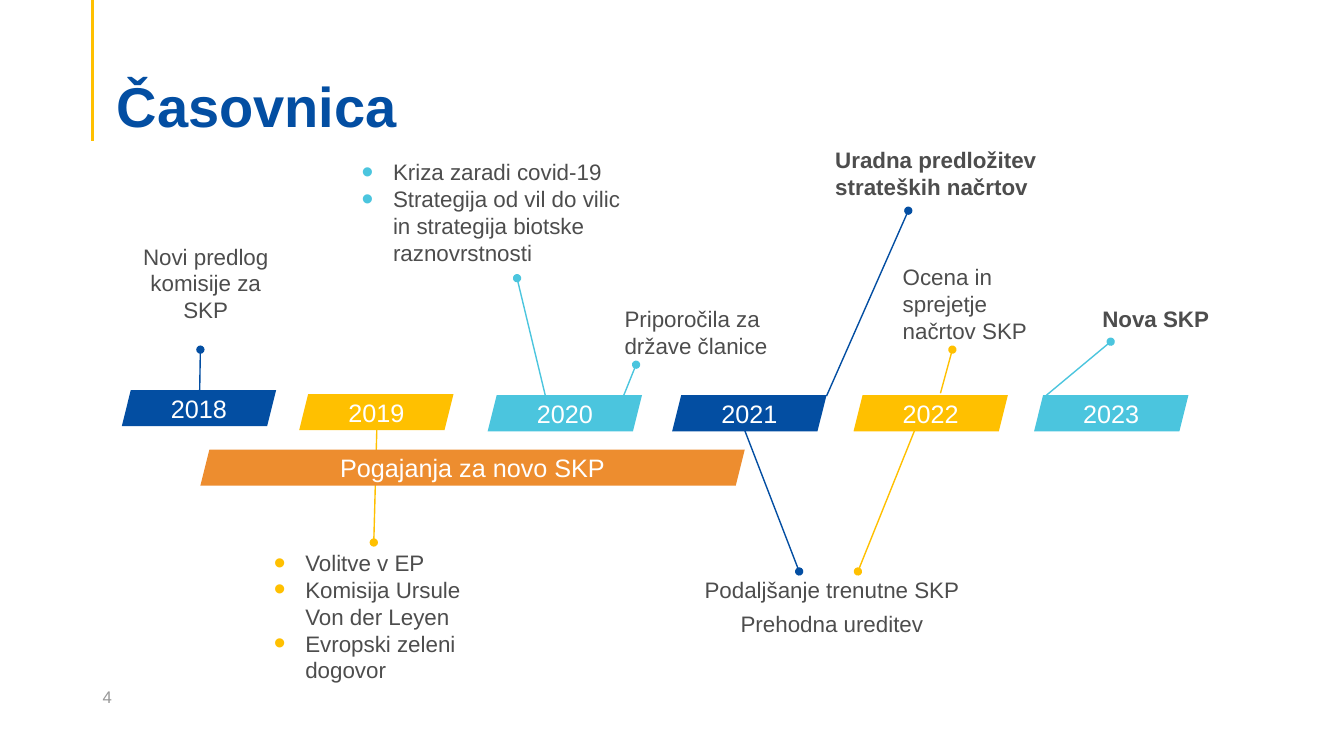
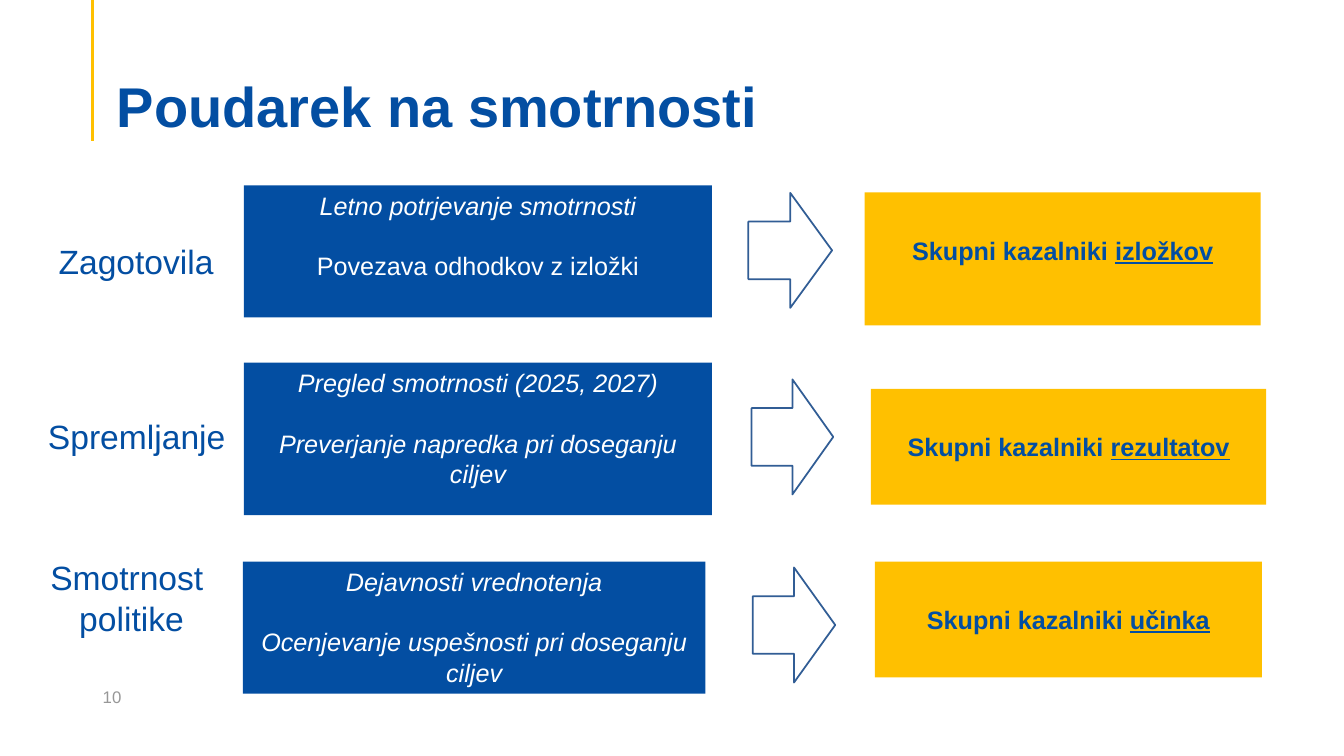
from dataclasses import dataclass, field

from lxml import etree
from pptx import Presentation
from pptx.dml.color import RGBColor
from pptx.enum.shapes import MSO_CONNECTOR, MSO_SHAPE
from pptx.enum.text import MSO_ANCHOR, MSO_AUTO_SIZE, PP_ALIGN
from pptx.oxml.ns import qn
from pptx.util import Cm, Pt

LEFT, CENTER = PP_ALIGN.LEFT, PP_ALIGN.CENTER
TOP, MIDDLE, BOTTOM = MSO_ANCHOR.TOP, MSO_ANCHOR.MIDDLE, MSO_ANCHOR.BOTTOM
RECT, SLANT, ARROW = MSO_SHAPE.RECTANGLE, MSO_SHAPE.PARALLELOGRAM, MSO_SHAPE.RIGHT_ARROW
STRAIGHT = MSO_CONNECTOR.STRAIGHT
NO_FIT = MSO_AUTO_SIZE.NONE

HUES = {
    "navy": "034EA2", "gold": "FFC000", "sky": "4BC5DE", "orange": "ED8D2F",
    "white": "FFFFFF", "text": "4D4D4D", "grey": "979797", "edge": "315D95",
}


@dataclass
class Style:
    size: float
    hue: str
    align: int = LEFT
    anchor: int = TOP
    gap: float = 0  # points before each later paragraph
    font: dict = field(default_factory=dict)
    frame: dict = field(default_factory=dict)


@dataclass
class Box:
    x: float
    y: float
    w: float
    h: float

    def place(self) -> tuple:
        return Cm(self.x), Cm(self.y), Cm(self.w), Cm(self.h)


@dataclass
class Note:
    box: Box
    lines: list
    style: Style


@dataclass
class Points:
    box: Box
    lines: list
    hue: str
    anchor: int


@dataclass
class Link:
    x: float
    y: float
    end_x: float
    end_y: float
    hue: str


@dataclass
class Row:
    label: str
    label_box: Box
    task_box: Box
    tasks: list
    arrow_box: Box
    goal_box: Box
    goal: str


TITLE = Style(40, "navy", anchor=BOTTOM, font={"bold": True}, frame={"margin_bottom": 0})
NUMBER = Style(12, "grey", anchor=MIDDLE)
CHIP = Style(18, "white", CENTER, MIDDLE)
PLAIN = Style(16, "text", anchor=BOTTOM)
STRONG = Style(16, "text", anchor=BOTTOM, font={"bold": True})
MID = Style(16, "text", CENTER, gap=5)
LABEL = Style(24, "navy", CENTER)
TASK = Style(18, "white", CENTER, gap=21.5, font={"italic": True})
GOAL = Style(18, "navy", CENTER, font={"bold": True},
             frame={"margin_left": Cm(0.3), "margin_right": Cm(0.3), "margin_top": Cm(1.07)})


# Shared helpers
def color(name: str) -> RGBColor:
    return RGBColor.from_string(HUES[name])


def apply(target, values: dict) -> None:
    for name, value in values.items():
        setattr(target, name, value)


def add_mark(props, hue: str) -> None:
    """Give a paragraph a large coloured round bullet."""
    props.set("marL", str(Cm(0.79)))
    props.set("indent", str(-Cm(0.79)))
    tint = etree.SubElement(props, qn("a:buClr"))
    etree.SubElement(tint, qn("a:srgbClr"), val=HUES[hue])
    etree.SubElement(props, qn("a:buSzPct"), val="150000")
    etree.SubElement(props, qn("a:buFont"), typeface="Arial")
    etree.SubElement(props, qn("a:buChar"), char="•")


def write(shape, lines: list, style: Style, mark: str = "") -> None:
    """Each line is a string or a list of (text, font changes) runs."""
    frame = shape.text_frame
    apply(frame, {"word_wrap": True, "auto_size": NO_FIT,
                  "vertical_anchor": style.anchor, **style.frame})
    for i, line in enumerate(lines):
        para = frame.add_paragraph() if i else frame.paragraphs[0]
        if mark:
            add_mark(para._p.get_or_add_pPr(), mark)
        apply(para, {"alignment": style.align, "space_before": Pt(style.gap if i else 0)})
        for text, change in [(line, {})] if isinstance(line, str) else line:
            run = para.add_run()
            run.text = text
            apply(run.font, {"name": "Arial", "size": Pt(style.size), **style.font, **change})
            run.font.color.rgb = color(style.hue)


def add_text(slide, box: Box, lines: list, style: Style) -> None:
    write(slide.shapes.add_textbox(*box.place()), lines, style)


def add_block(slide, kind: int, box: Box, fill: str, edge: str = ""):
    shape = slide.shapes.add_shape(kind, *box.place())
    shape.shadow.inherit = False
    shape.fill.solid()
    shape.fill.fore_color.rgb = color(fill)
    if edge:
        shape.line.color.rgb = color(edge)
        shape.line.width = Pt(1.25)
    else:
        shape.line.fill.background()
    return shape


def add_line(slide, link: Link, width: float = 1, dot: bool = True) -> None:
    line = slide.shapes.add_connector(
        STRAIGHT, Cm(link.x), Cm(link.y), Cm(link.end_x), Cm(link.end_y))
    line.line.color.rgb = color(link.hue)
    line.line.width = Pt(width)
    props = line._element.spPr
    if dot:
        etree.SubElement(props.find(qn("a:ln")), qn("a:tailEnd"), type="oval")
    etree.SubElement(props, qn("a:effectLst"))


def set_place(shape, box: Box) -> None:
    apply(shape, dict(zip(("left", "top", "width", "height"), box.place())))


def add_slide(deck, layout: int, title: str, number: str):
    slide = deck.slides.add_slide(deck.slide_layouts[layout])
    add_line(slide, Link(2.34, 0, 2.34, 3.56, "gold"), 2.25, False)
    head = slide.shapes.title
    set_place(head, Box(2.69, 1.35, 29.21, 2.18))
    write(head, [title], TITLE)
    head.text_frame.paragraphs[0].line_spacing = 0.9
    add_text(slide, Box(2.34, 17.04, 7.62, 1.02), [number], NUMBER)
    return slide


# Timeline
YEARS = [
    ("2018", 3.07, 9.83), ("2019", 7.54, 9.93), ("2020", 12.29, 9.96),
    ("2021", 16.94, 9.96), ("2022", 21.51, 9.96), ("2023", 26.06, 9.96),
]
CYCLE = ("navy", "gold", "sky")
LINKS = [
    Link(5.03, 9.96, 5.05, 8.81, "navy"),
    Link(9.5, 10.67, 9.42, 13.67, "gold"),
    Link(13.77, 10.08, 13.03, 7.01, "sky"),
    Link(15.72, 9.96, 16.03, 9.19, "sky"),
    Link(18.77, 10.85, 20.14, 14.4, "navy"),
    Link(20.83, 9.98, 22.89, 5.31, "navy"),
    Link(23.06, 10.82, 21.62, 14.4, "gold"),
    Link(23.7, 9.91, 24, 8.81, "gold"),
    Link(26.37, 9.96, 27.99, 8.61, "sky"),
]
NOTES = [
    Note(Box(3.23, 5.99, 3.91, 2.31), ["Novi predlog komisije za SKP"], MID),
    Note(Box(15.49, 7.54, 5.64, 1.63), ["Priporočila za države članice"], PLAIN),
    Note(Box(17.42, 14.4, 7.09, 2.49),
         ["Podaljšanje trenutne SKP", "Prehodna ureditev"], MID),
    Note(Box(20.8, 3.53, 6.3, 1.63), ["Uradna predložitev strateških načrtov"], STRONG),
    Note(Box(22.5, 6.48, 3.99, 2.31), ["Ocena in sprejetje načrtov SKP"], PLAIN),
    Note(Box(27.53, 7.54, 3.4, 0.94), ["Nova SKP"], STRONG),
]
LISTS = [
    Points(Box(8.86, 3.86, 7.06, 3),
           ["Kriza zaradi covid-19",
            "Strategija od vil do vilic in strategija biotske raznovrstnosti"], "sky", TOP),
    Points(Box(6.65, 13.67, 5.54, 3.68),
           ["Volitve v EP", "Komisija Ursule Von der Leyen", "Evropski zeleni dogovor"],
           "gold", BOTTOM),
]


def draw_years(deck) -> None:
    slide = add_slide(deck, 3, "Časovnica", "4")
    for i, (year, x, y) in enumerate(YEARS):
        chip = add_block(slide, SLANT, Box(x, y, 3.89, 0.91), CYCLE[i % len(CYCLE)])
        write(chip, [year], CHIP)
    for link in LINKS:
        add_line(slide, link)
    band = add_block(slide, SLANT, Box(5.05, 11.33, 13.72, 0.91), "orange")
    write(band, ["Pogajanja za novo SKP"], CHIP)
    for note in NOTES:
        add_text(slide, note.box, note.lines, note.style)
    for i, points in enumerate(LISTS, 1):
        body = slide.placeholders[i]
        set_place(body, points.box)
        write(body, points.lines, Style(16, "text", anchor=points.anchor), points.hue)


# Performance rows
ROWS = [
    Row("Zagotovila", Box(0.74, 5.94, 5.38, 1.27),
        Box(6.15, 4.67, 11.79, 3.33),
        ["Letno potrjevanje smotrnosti", [("Povezava odhodkov z izložki", {"italic": False})]],
        Box(18.86, 4.86, 2.11, 2.9), Box(21.79, 4.85, 9.98, 3.35), "izložkov"),
    Row("Spremljanje", Box(0.74, 10.36, 5.41, 1.27),
        Box(6.15, 9.14, 11.79, 3.84),
        ["Pregled smotrnosti (2025, 2027)", "Preverjanje napredka pri doseganju ciljev"],
        Box(18.94, 9.56, 2.06, 2.9), Box(21.95, 9.8, 9.96, 2.92), "rezultatov"),
    Row("Smotrnost \npolitike", Box(0.51, 13.92, 5.61, 2.31),
        Box(6.12, 14.15, 11.66, 3.33),
        ["Dejavnosti vrednotenja", "Ocenjevanje uspešnosti pri doseganju ciljev"],
        Box(18.97, 14.3, 2.08, 2.9), Box(22.05, 14.15, 9.75, 2.92), "učinka"),
]


def draw_rows(deck) -> None:
    slide = add_slide(deck, 5, "Poudarek na smotrnosti", "10")
    for row in ROWS:
        add_text(slide, row.label_box, row.label.split("\n"), LABEL)
        write(add_block(slide, RECT, row.task_box, "navy"), row.tasks, TASK)
        add_block(slide, ARROW, row.arrow_box, "white", "edge")
        goal = [("Skupni kazalniki ", {}), (row.goal, {"underline": True})]
        write(add_block(slide, RECT, row.goal_box, "gold"), [goal], GOAL)


def main() -> None:
    deck = Presentation()
    deck.slide_width, deck.slide_height = Cm(33.87), Cm(19.05)
    draw_years(deck)
    draw_rows(deck)
    deck.save("out.pptx")


if __name__ == "__main__":
    main()
